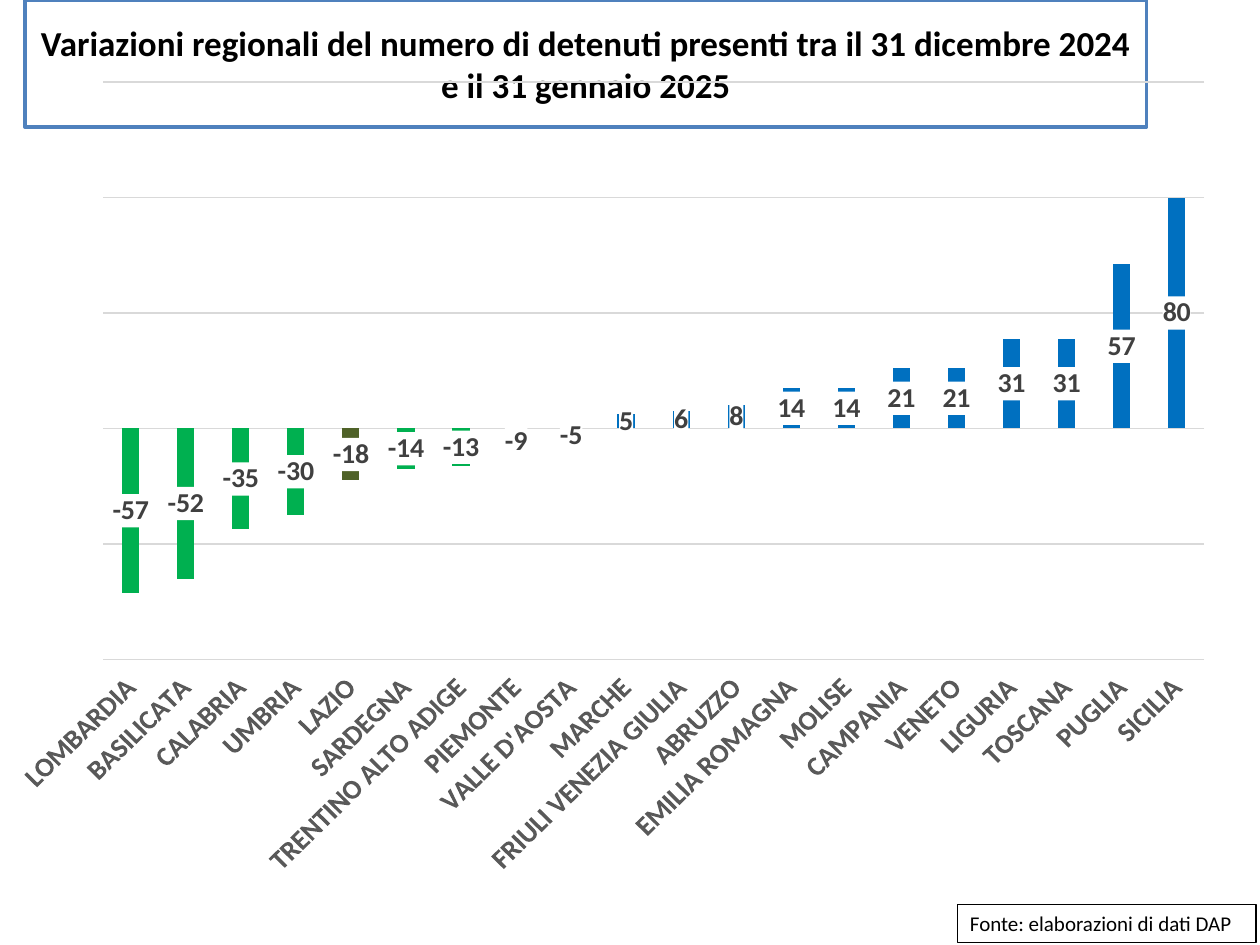
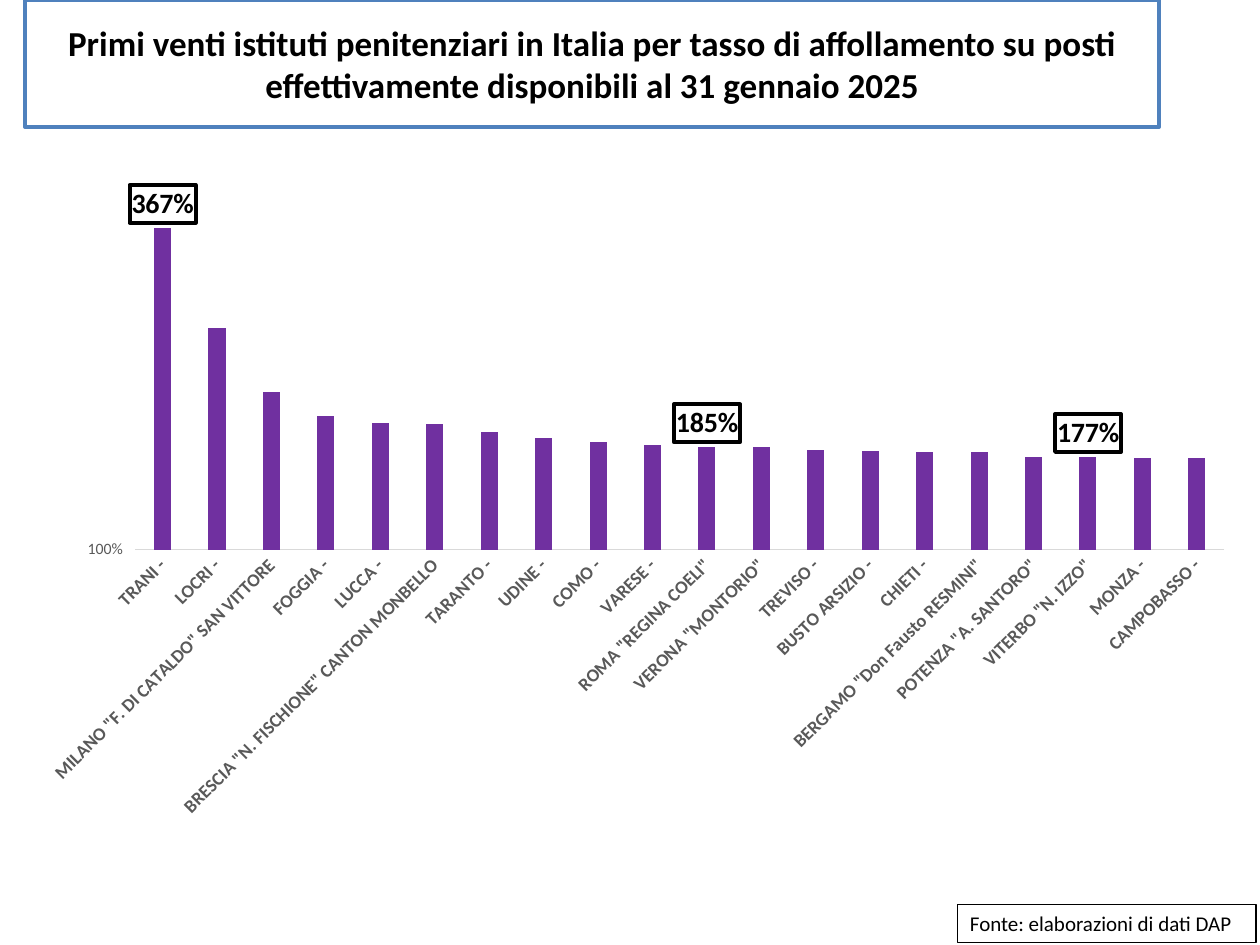
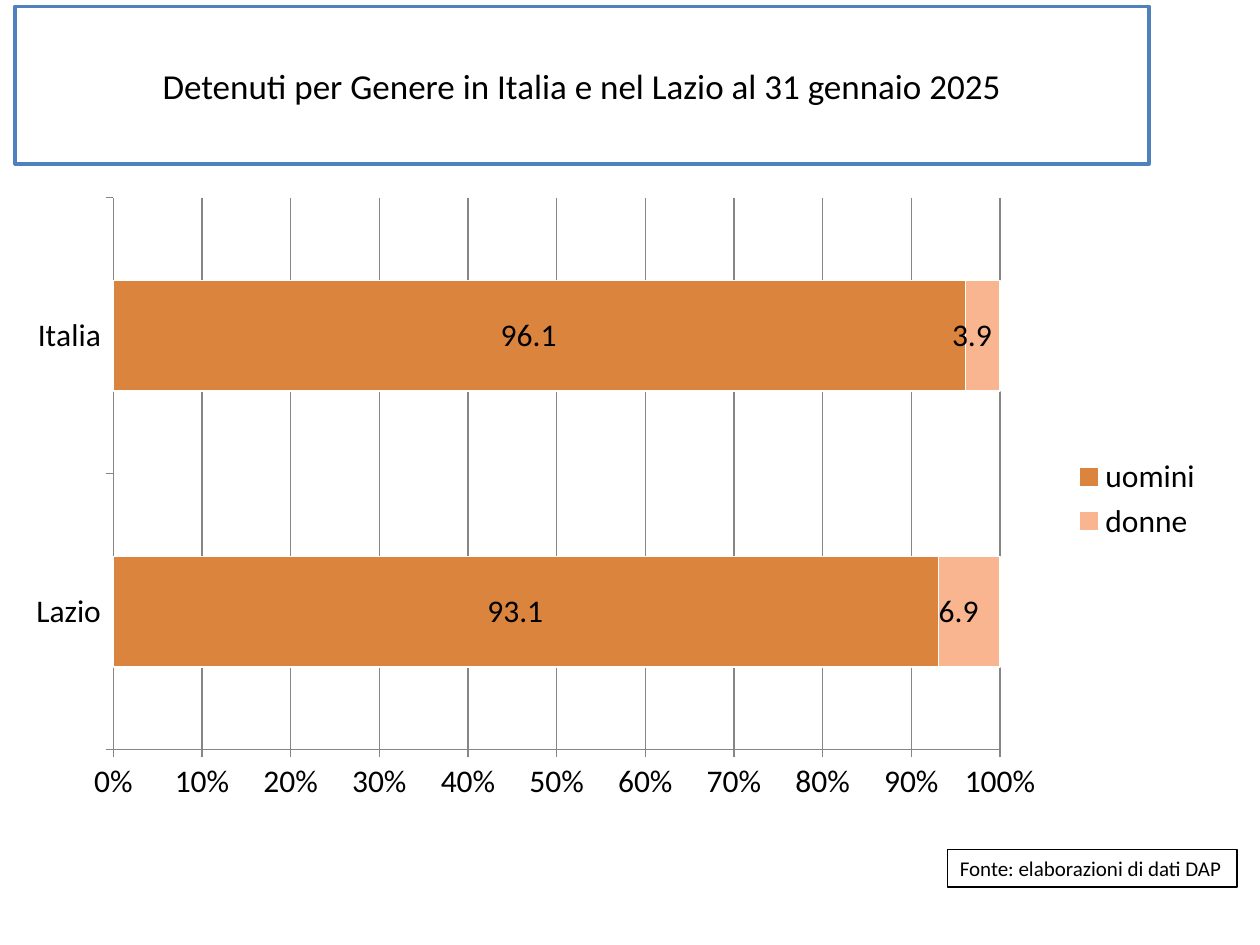
from dataclasses import dataclass

from lxml.etree import SubElement
from pptx import Presentation
from pptx.chart.data import CategoryChartData as ChartData
from pptx.dml.color import RGBColor
from pptx.enum.chart import XL_CHART_TYPE as Kind, XL_LABEL_POSITION as LabelPlace
from pptx.enum.chart import XL_LEGEND_POSITION as LegendPlace
from pptx.enum.chart import XL_TICK_LABEL_POSITION as TickPlace, XL_TICK_MARK as Tick
from pptx.enum.text import MSO_ANCHOR as Anchor, MSO_AUTO_SIZE as AutoSize, PP_ALIGN as Align
from pptx.oxml import parse_xml
from pptx.oxml.ns import nsdecls, qn
from pptx.util import Pt


@dataclass(frozen=True)
class Theme:
    font: str = "Calibri"
    white: str = "FFFFFF"
    black: str = "000000"
    frame: str = "4F81BD"
    grid: str = "D9D9D9"
    dark_grid: str = "868686"
    axis_text: str = "595959"
    label_text: str = "404040"
    decrease: str = "00B050"
    lazio: str = "4F6228"
    increase: str = "0070C0"
    crowding: str = "7030A0"
    men: str = "DB843D"
    women: str = "F9B590"
    title_size: float = 20
    source_size: float = 12
    gender_size: float = 18
    label_size: float = 16
    prison_size: float = 10.5
    scale_size: float = 9


THEME = Theme()
SOURCE = "Fonte: elaborazioni di dati DAP"
DECIMAL = r'_-* #,##0.0\ _€_-;\-* #,##0.0\ _€_-;_-* "-"??\ _€_-;_-@_-'

REGIONS = {
    "LOMBARDIA": -57, "BASILICATA": -52, "CALABRIA": -35, "UMBRIA": -30, "LAZIO": -18,
    "SARDEGNA": -14, "TRENTINO ALTO ADIGE": -13, "PIEMONTE": -9, "VALLE D'AOSTA": -5,
    "MARCHE": 5, "FRIULI VENEZIA GIULIA": 6, "ABRUZZO": 8, "EMILIA ROMAGNA": 14,
    "MOLISE": 14, "CAMPANIA": 21, "VENETO": 21, "LIGURIA": 31, "TOSCANA": 31,
    "PUGLIA": 57, "SICILIA": 80,
}
PRISONS = {
    "TRANI -": 3.67, "LOCRI -": 2.84, 'MILANO "F. DI CATALDO" SAN VITTORE': 2.31,
    "FOGGIA -": 2.11, "LUCCA -": 2.05, 'BRESCIA "N. FISCHIONE" CANTON MONBELLO': 2.04,
    "TARANTO -": 1.98, "UDINE -": 1.93, "COMO -": 1.89, "VARESE -": 1.87,
    'ROMA "REGINA COELI"': 1.85, 'VERONA "MONTORIO"': 1.85, "TREVISO -": 1.83,
    "BUSTO ARSIZIO -": 1.82, "CHIETI -": 1.81, 'BERGAMO "Don Fausto RESMINI"': 1.81,
    'POTENZA "A. SANTORO"': 1.77, 'VITERBO "N. IZZO"': 1.77, "MONZA -": 1.76,
    "CAMPOBASSO -": 1.76,
}
LABELLED_PRISONS = ("TRANI -", 'ROMA "REGINA COELI"', 'VITERBO "N. IZZO"')


def style_font(font, size, color=THEME.black, bold=False):
    font.name = THEME.font
    font.size = Pt(size)
    font.bold = bold
    font.color.rgb = RGBColor.from_string(color)


def paint(target, color):
    target.fill.solid()
    target.fill.fore_color.rgb = RGBColor.from_string(color)


def draw_line(line, color, width=0.75):
    line.color.rgb = RGBColor.from_string(color)
    line.width = Pt(width)


def write(box, text, size, bold=False, align=Align.LEFT, anchor=Anchor.TOP):
    box.text_frame.vertical_anchor = anchor
    para = box.text_frame.paragraphs[0]
    para.alignment = align
    span = para.add_run()
    span.text = text
    style_font(span.font, size, bold=bold)


def add_page(deck, title, title_at, source_at, bold=True):
    page = deck.slides.add_slide(deck.slide_layouts[5])
    box = page.shapes.title
    box.left, box.top, box.width, box.height = map(Pt, title_at)
    paint(box, THEME.white)
    draw_line(box.line, THEME.frame, 2)
    box.text_frame.auto_size = AutoSize.NONE
    write(box, title, THEME.title_size, bold=bold, align=Align.CENTER, anchor=Anchor.MIDDLE)

    source = page.shapes.add_textbox(*map(Pt, source_at))
    paint(source, THEME.white)
    draw_line(source.line, THEME.black)
    source.text_frame.word_wrap = False
    source.text_frame.auto_size = AutoSize.SHAPE_TO_FIT_TEXT
    write(source, SOURCE, THEME.source_size)
    return page


def place_plot(chart, place):
    area = chart.element.find(".//" + qn("c:plotArea"))
    for old in area.findall(qn("c:layout")):
        area.remove(old)
    layout = parse_xml(f"<c:layout {nsdecls('c')}/>")
    manual = SubElement(layout, qn("c:manualLayout"))
    settings = [("layoutTarget", "inner"), ("xMode", "edge"), ("yMode", "edge")]
    for tag, value in settings + list(zip("xywh", place)):
        SubElement(manual, qn(f"c:{tag}")).set("val", str(value))
    area.insert(0, layout)


def add_bars(page, kind, at, place, categories, series, size, gap, overlap, grid,
             number_format="General"):
    data = ChartData(number_format=number_format)
    data.categories = categories
    for name, values, color in series:
        data.add_series(name, values)
    chart = page.shapes.add_chart(kind, *map(Pt, at), data).chart
    chart.has_title = False
    chart.has_legend = False
    style_font(chart.font, size)
    plot = chart.plots[0]
    plot.vary_by_categories = False
    plot.gap_width, plot.overlap = gap, overlap
    for bars, (name, values, color) in zip(plot.series, series):
        bars.invert_if_negative = False
        paint(bars.format, color)
    chart.value_axis.has_major_gridlines = True
    draw_line(chart.value_axis.major_gridlines.format.line, grid)
    draw_line(chart.category_axis.format.line, grid)
    place_plot(chart, place)
    return chart


def slant_categories(chart, size):
    axis = chart.category_axis
    axis.major_tick_mark = Tick.NONE
    style_font(axis.tick_labels.font, size, THEME.axis_text, bold=True)
    for body in chart.element.xpath(".//c:catAx/c:txPr/a:bodyPr"):
        body.set("rot", "-2700000")
        body.set("vert", "horz")


def set_scale(axis, low, high, step):
    axis.minimum_scale, axis.maximum_scale, axis.major_unit = low, high, step


def show_values(bars, size, number_format, color=THEME.black, bold=False):
    labels = bars.data_labels
    labels.show_value = True
    labels.number_format = number_format
    labels.number_format_is_linked = False
    labels.position = LabelPlace.CENTER
    style_font(labels.font, size, color, bold)


def back_labels(chart, level, border=""):
    for text in chart.element.xpath(f".//c:{level}/c:txPr"):
        text.addprevious(parse_xml(
            f"<c:spPr {nsdecls('c', 'a')}><a:solidFill><a:srgbClr val='{THEME.white}'/>"
            f"</a:solidFill>{border}</c:spPr>"))


def regions_page(deck):
    page = add_page(
        deck,
        "Variazioni regionali del numero di detenuti presenti tra il 31 dicembre 2024 "
        "e il 31 gennaio 2025",
        (14.4, 0, 640.8, 72.7), (547.2, 517, 170.6, 21.6))
    chart = add_bars(
        page, Kind.COLUMN_CLUSTERED, (10, 38.9, 699.8, 462.2), (0.07, 0.02, 0.9, 0.73),
        REGIONS, [("Variazione", REGIONS.values(), THEME.increase)],
        THEME.label_size, 219, -27, THEME.grid)
    place_plot(chart, (0.067, 0.018, 0.902, 0.733))
    slant_categories(chart, THEME.label_size)
    chart.category_axis.tick_label_position = TickPlace.LOW
    set_scale(chart.value_axis, -80, 120, 40)
    chart.value_axis.visible = False
    bars = chart.plots[0].series[0]
    for index, (region, change) in enumerate(REGIONS.items()):
        if change < 0:
            color = THEME.lazio if region == "LAZIO" else THEME.decrease
            paint(bars.points[index].format, color)
    show_values(bars, THEME.label_size, "#,##0", THEME.label_text, bold=True)
    back_labels(chart, "dLbls")


def prisons_page(deck):
    page = add_page(
        deck,
        "Primi venti istituti penitenziari in Italia per tasso di affollamento su posti "
        "effettivamente disponibili al 31 gennaio 2025",
        (14.4, 0, 648, 72.7), (547.2, 517, 170.6, 21.6))
    chart = add_bars(
        page, Kind.COLUMN_CLUSTERED, (14.4, 100, 699.1, 375.8), (0.09, 0.02, 0.89, 0.55),
        PRISONS, [("Affollamento", PRISONS.values(), THEME.crowding)],
        10, 219, -27, THEME.grid, "0%")
    slant_categories(chart, THEME.prison_size)
    axis = chart.value_axis
    set_scale(axis, 1, 4, 25)
    axis.format.line.fill.background()
    style_font(axis.tick_labels.font, THEME.scale_size, THEME.axis_text)
    bars = chart.plots[0].series[0]
    bars.data_labels.show_value = False
    for index, prison in enumerate(PRISONS):
        if prison in LABELLED_PRISONS:
            label = bars.points[index].data_label
            style_font(label.font, THEME.label_size, bold=True)
            label.position = LabelPlace.OUTSIDE_END
    back_labels(
        chart, "dLbl",
        f"<a:ln w='{Pt(2.25)}'><a:solidFill><a:srgbClr val='{THEME.black}'/></a:solidFill></a:ln>")


def gender_page(deck):
    page = add_page(
        deck, "Detenuti per Genere in Italia e nel Lazio al 31 gennaio 2025",
        (8.6, 3.6, 648, 90), (541.4, 485.3, 165.6, 21.6), bold=False)
    chart = add_bars(
        page, Kind.BAR_STACKED_100, (10, 105.8, 684.7, 358.6), (0.08, 0.02, 0.74, 0.88),
        ["Lazio", "Italia"],
        [("uomini", (93.1, 96.1), THEME.men), ("donne", (6.9, 3.9), THEME.women)],
        THEME.gender_size, 150, 100, THEME.dark_grid)
    chart.category_axis.major_tick_mark = Tick.OUTSIDE
    axis = chart.value_axis
    axis.minimum_scale = 0
    axis.major_tick_mark = Tick.OUTSIDE
    draw_line(axis.format.line, THEME.dark_grid)
    axis.tick_labels.number_format = "0%"
    axis.tick_labels.number_format_is_linked = False
    for bars in chart.plots[0].series:
        draw_line(bars.format.line, THEME.white)
        show_values(bars, THEME.gender_size, DECIMAL)
    chart.has_legend = True
    chart.legend.position = LegendPlace.RIGHT
    chart.legend.include_in_layout = False
    style_font(chart.legend.font, THEME.gender_size)


def main():
    deck = Presentation()
    deck.slide_width, deck.slide_height = Pt(720), Pt(540)
    regions_page(deck)
    prisons_page(deck)
    gender_page(deck)
    deck.save("out.pptx")


if __name__ == "__main__":
    main()
